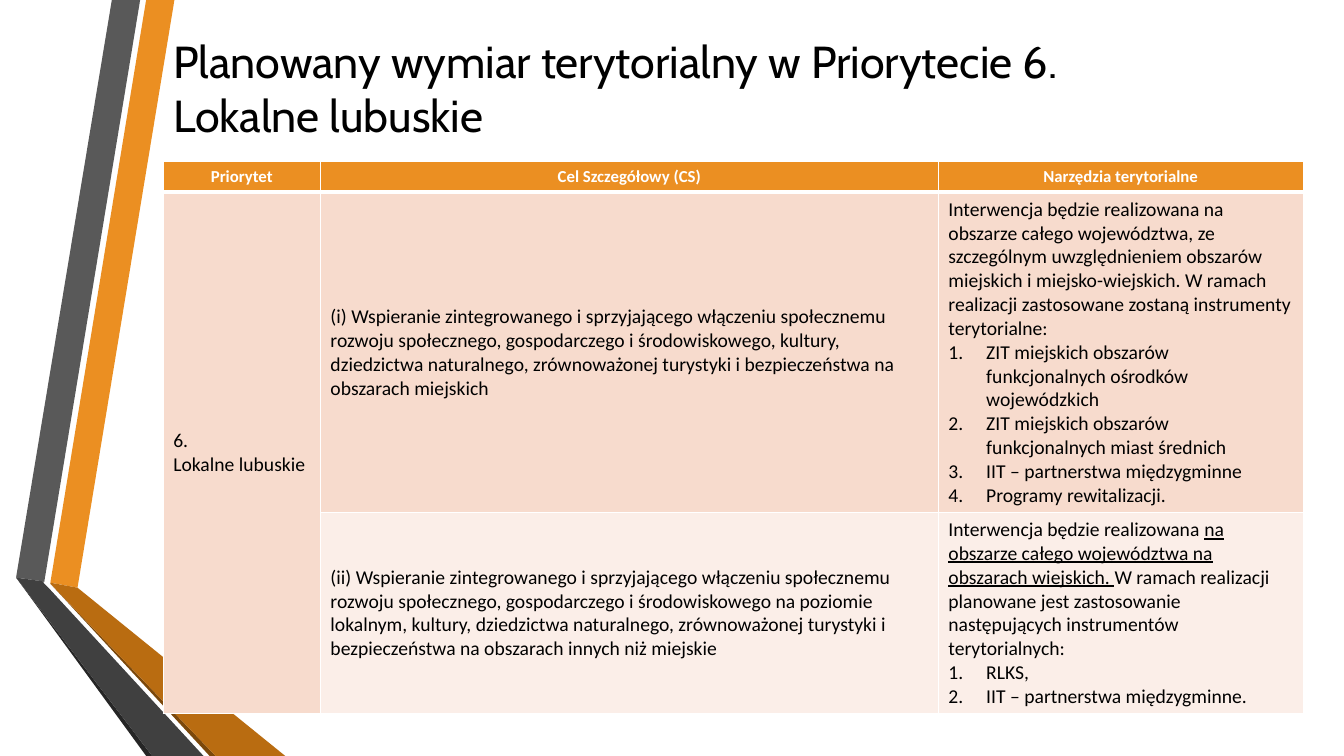
from dataclasses import dataclass

from lxml import etree
from pptx import Presentation
from pptx.dml.color import RGBColor
from pptx.enum.text import MSO_ANCHOR, PP_ALIGN
from pptx.oxml.ns import qn
from pptx.util import Pt

LEFT, CENTER = PP_ALIGN.LEFT, PP_ALIGN.CENTER
TOP, MIDDLE = MSO_ANCHOR.TOP, MSO_ANCHOR.MIDDLE

COLORS = {
    "orange": "EB8F22",
    "orange_dark": "B96C11",
    "orange_edge": "7B480B",
    "grey": "595959",
    "grey_dark": "404040",
    "grey_edge": "262626",
    "row_first": "F7DBCD",
    "row_second": "FBEEE8",
    "white": "FFFFFF",
    "black": "000000",
}
LIST_INDENT = 27
COLUMN_WIDTHS = (112.3, 441.4, 260.6)
ROW_HEIGHTS = (21.8, 229, 143.5)


@dataclass(frozen=True)
class Band:
    color: str
    points: tuple[tuple[float, float], ...]


@dataclass(frozen=True)
class Span:
    text: str
    underline: bool = False


@dataclass(frozen=True)
class Entry:
    spans: tuple[Span, ...]
    numbered: bool = False


@dataclass(frozen=True)
class TableRow:
    color: str
    cells: tuple[tuple[Entry, ...], ...]


BANDS = (
    Band("orange", ((36, 416.2), (55.4, 419.8), (124.6, 0), (104.4, 0))),
    Band("grey", ((100.1, 0), (79.9, 0), (11.5, 412.6), (31.7, 415.4))),
    Band("grey_edge", ((11.5, 412.6), (104.4, 540), (108.7, 540))),
    Band("orange_edge", ((36, 416.9), (149.8, 540), (154.1, 540))),
    Band("orange_dark", ((36, 416.9), (154.1, 540), (203.8, 540),
                         (55.4, 419.8), (36, 416.2))),
    Band("grey_dark", ((145.4, 540), (34.6, 419.8), (31, 416.2), (31.7, 415.4),
                       (11.5, 412.6), (108.7, 540))),
)


def plain(*texts: str) -> tuple[Entry, ...]:
    return tuple(Entry((Span(text),)) for text in texts)


def numbered(*texts: str) -> tuple[Entry, ...]:
    return tuple(Entry((Span(text),), numbered=True) for text in texts)


TITLE = plain("Planowany wymiar terytorialny w Priorytecie 6.\nLokalne lubuskie")
HEADER = TableRow("orange", (
    plain("Priorytet"),
    plain("Cel Szczegółowy (CS)"),
    plain("Narzędzia terytorialne"),
))
URBAN = TableRow("row_first", (
    plain("6.", "Lokalne lubuskie"),
    plain("(i) Wspieranie zintegrowanego i sprzyjającego włączeniu społecznemu rozwoju "
          "społecznego, gospodarczego i środowiskowego, kultury, dziedzictwa naturalnego, "
          "zrównoważonej turystyki i bezpieczeństwa na obszarach miejskich"),
    plain("Interwencja będzie realizowana na obszarze całego województwa, ze szczególnym "
          "uwzględnieniem obszarów miejskich i miejsko-wiejskich. W ramach realizacji "
          "zastosowane zostaną instrumenty terytorialne:")
    + numbered("ZIT miejskich obszarów funkcjonalnych ośrodków wojewódzkich",
               "ZIT miejskich obszarów funkcjonalnych miast średnich",
               "IIT – partnerstwa międzygminne",
               "Programy rewitalizacji."),
))
RURAL = TableRow("row_second", (
    (),
    plain("(ii) Wspieranie zintegrowanego i sprzyjającego włączeniu społecznemu rozwoju "
          "społecznego, gospodarczego i środowiskowego na poziomie lokalnym, kultury, "
          "dziedzictwa naturalnego, zrównoważonej turystyki i bezpieczeństwa na obszarach "
          "innych niż miejskie"),
    (Entry((
        Span("Interwencja będzie realizowana "),
        Span("na obszarze całego województwa na obszarach wiejskich. ", underline=True),
        Span("W ramach realizacji planowane jest zastosowanie następujących "
             "instrumentów terytorialnych:"),
    )),) + numbered("RLKS,", "IIT – partnerstwa międzygminne."),
))
ROWS = (HEADER, URBAN, RURAL)


def rgb(name: str) -> RGBColor:
    return RGBColor.from_string(COLORS[name])


def add_numbering(paragraph) -> None:
    properties = paragraph._p.get_or_add_pPr()
    properties.set("marL", str(Pt(LIST_INDENT)))
    properties.set("indent", str(-Pt(LIST_INDENT)))
    etree.SubElement(properties, qn("a:buFont"), typeface="+mj-lt")
    etree.SubElement(properties, qn("a:buAutoNum"), type="arabicPeriod")


def write_text(frame, entries: tuple[Entry, ...], *, size: float, font: str = "Calibri",
               color: str = "black", bold: bool = False, align=LEFT) -> None:
    for index, entry in enumerate(entries):
        paragraph = frame.add_paragraph() if index else frame.paragraphs[0]
        paragraph.alignment = align
        if entry.numbered:
            add_numbering(paragraph)
        for span in entry.spans:
            for line_index, line in enumerate(span.text.split("\n")):
                if line_index:
                    paragraph.add_line_break()
                run = paragraph.add_run()
                run.text = line
                run.font.name = font
                run.font.size = Pt(size)
                run.font.bold = bold
                run.font.underline = span.underline
                run.font.color.rgb = rgb(color)


def add_band(slide, band: Band) -> None:
    start, *rest = [(Pt(x), Pt(y)) for x, y in band.points]
    builder = slide.shapes.build_freeform(*start)
    builder.add_line_segments(rest, close=True)
    shape = builder.convert_to_shape()
    shape.shadow.inherit = False
    shape.fill.solid()
    shape.fill.fore_color.rgb = rgb(band.color)
    shape.line.fill.background()


def add_title(slide) -> None:
    box = slide.shapes.add_textbox(Pt(116.6), Pt(20.2), Pt(843.1), Pt(85))
    box.text_frame.word_wrap = True
    box.text_frame.vertical_anchor = MIDDLE
    write_text(box.text_frame, TITLE, size=32, font="Cabin")


def set_borders(cell, top: float, bottom: float) -> None:
    properties = cell._tc.get_or_add_tcPr()
    for side, width in (("L", 1), ("R", 1), ("T", top), ("B", bottom)):
        line = etree.SubElement(properties, qn(f"a:ln{side}"), w=str(Pt(width)))
        fill = etree.SubElement(line, qn("a:solidFill"))
        etree.SubElement(fill, qn("a:srgbClr"), val=COLORS["white"])


def add_priority_table(slide) -> None:
    table = slide.shapes.add_table(
        len(ROWS), len(COLUMN_WIDTHS), Pt(116.6), Pt(115.5),
        Pt(sum(COLUMN_WIDTHS)), Pt(sum(ROW_HEIGHTS))).table
    for column, width in zip(table.columns, COLUMN_WIDTHS):
        column.width = Pt(width)
    for row, height in zip(table.rows, ROW_HEIGHTS):
        row.height = Pt(height)
    table.cell(1, 0).merge(table.cell(2, 0))

    for row_index, row in enumerate(ROWS):
        is_header = row is HEADER
        for column_index, entries in enumerate(row.cells):
            cell = table.cell(row_index, column_index)
            set_borders(cell, top=3 if row is URBAN else 1, bottom=3 if is_header else 1)
            cell.fill.solid()
            cell.fill.fore_color.rgb = rgb(row.color)
            cell.vertical_anchor = TOP if is_header else MIDDLE
            if is_header:
                write_text(cell.text_frame, entries, size=12, color="white",
                           bold=True, align=CENTER)
            else:
                write_text(cell.text_frame, entries, size=14)


def main() -> None:
    presentation = Presentation()
    presentation.slide_width = Pt(960)
    presentation.slide_height = Pt(540)
    slide = presentation.slides.add_slide(presentation.slide_layouts[6])
    for band in BANDS:
        add_band(slide, band)
    add_title(slide)
    add_priority_table(slide)
    presentation.save("out.pptx")


if __name__ == "__main__":
    main()
